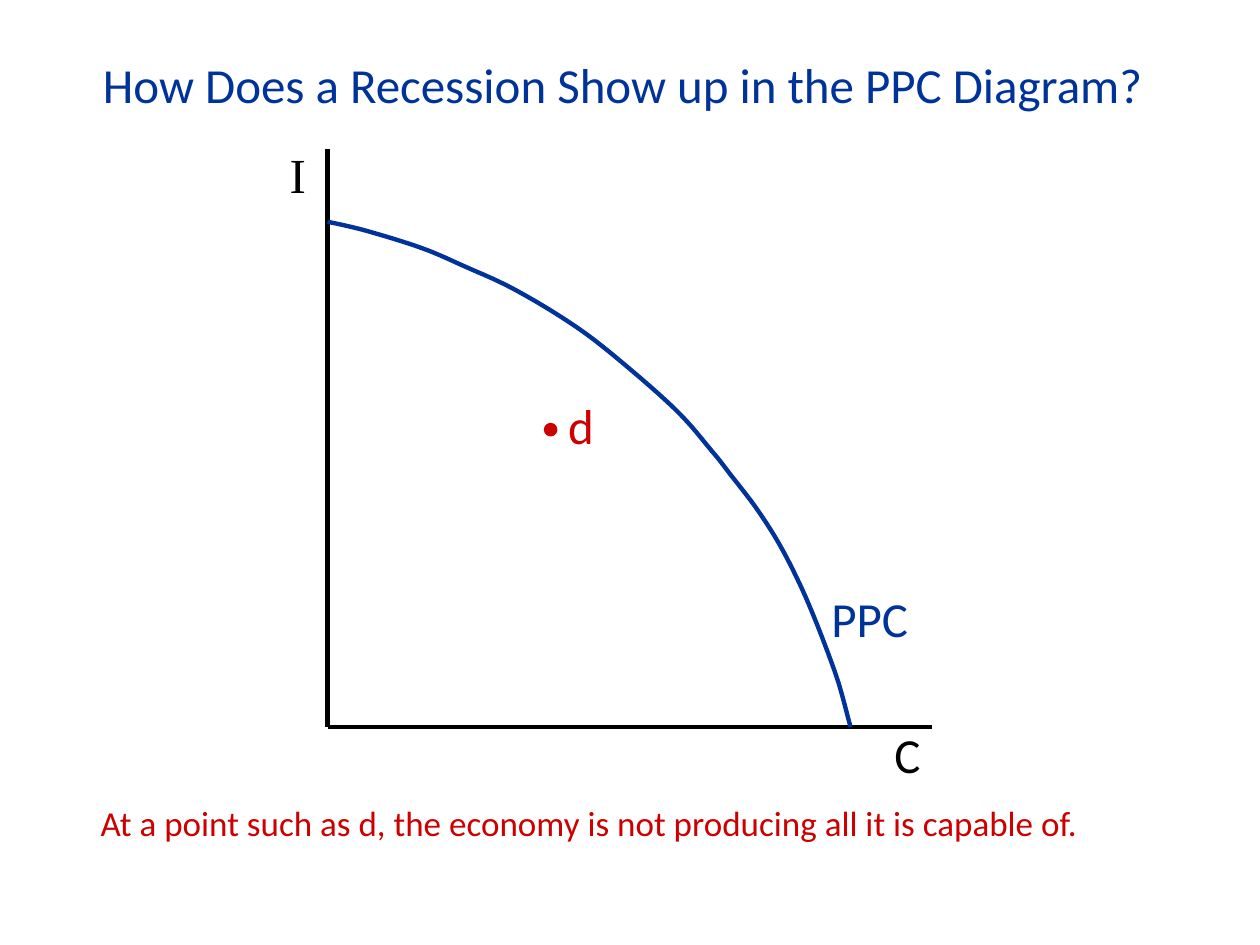
from dataclasses import dataclass

from lxml import etree
from pptx import Presentation
from pptx.dml.color import RGBColor
from pptx.enum.shapes import MSO_CONNECTOR as Connector, MSO_SHAPE as Shape
from pptx.enum.text import MSO_ANCHOR as Anchor, MSO_AUTO_SIZE as AutoSize, PP_ALIGN as Align
from pptx.oxml.ns import qn
from pptx.util import Inches, Pt


@dataclass(frozen=True)
class Theme:
    blue: RGBColor = RGBColor(0x00, 0x33, 0x99)
    red: RGBColor = RGBColor(0xCC, 0x00, 0x00)
    black: RGBColor = RGBColor(0x00, 0x00, 0x00)
    font: str = "Calibri"
    serif: str = "Times New Roman"
    large: Pt = Pt(28)
    small: Pt = Pt(20)
    stroke: Pt = Pt(2.5)
    outline: Pt = Pt(2)


class DiagramSlide:
    def __init__(self, slide, theme):
        self.slide = slide
        self.theme = theme

    def text(self, text, left, top, width, height, color, size=None, font=None,
             align=Align.LEFT, anchor=Anchor.TOP):
        box = self.slide.shapes.add_textbox(
            Inches(left), Inches(top), Inches(width), Inches(height))
        text_frame = box.text_frame
        text_frame.word_wrap = True
        text_frame.auto_size = AutoSize.SHAPE_TO_FIT_TEXT
        text_frame.vertical_anchor = anchor
        text_frame.text = text
        paragraph = text_frame.paragraphs[0]
        paragraph.alignment = align
        run_font = paragraph.runs[0].font
        run_font.name = font or self.theme.font
        run_font.size = size or self.theme.large
        run_font.color.rgb = color

    def line(self, start, end, color):
        connector = self.slide.shapes.add_connector(
            Connector.STRAIGHT, *(Inches(value) for value in (*start, *end)))
        connector.line.color.rgb = color
        connector.line.width = self.theme.stroke
        properties = connector._element.spPr
        etree.SubElement(properties, qn("a:effectLst"))

    def curve(self, knots, color, steps=8):
        points = [(Inches(x), Inches(y)) for x, y in smooth_points(knots, steps)]
        builder = self.slide.shapes.build_freeform(*points[0], scale=1.0)
        builder.add_line_segments(points[1:], close=False)
        shape = builder.convert_to_shape()
        shape.shadow.inherit = False
        shape.fill.background()
        shape.line.color.rgb = color
        shape.line.width = self.theme.stroke

    def dot(self, left, top, diameter, color):
        shape = self.slide.shapes.add_shape(
            Shape.OVAL, Inches(left), Inches(top), Inches(diameter), Inches(diameter))
        shape.shadow.inherit = False
        shape.fill.solid()
        shape.fill.fore_color.rgb = color
        shape.line.color.rgb = color
        shape.line.width = self.theme.outline


def smooth_points(knots, steps):
    """Return a Catmull-Rom curve through the knots as closely spaced points."""
    padded = [knots[0], *knots, knots[-1]]
    points = [knots[0]]
    for a, b, c, d in zip(padded, padded[1:], padded[2:], padded[3:]):
        for step in range(1, steps + 1):
            t = step / steps
            points.append(tuple(
                (2 * q + (r - p) * t + (2 * p - 5 * q + 4 * r - s) * t ** 2
                 + (3 * q - p - 3 * r + s) * t ** 3) / 2
                for p, q, r, s in zip(a, b, c, d)))
    return points


def main():
    presentation = Presentation()
    presentation.slide_width = Inches(10)
    presentation.slide_height = Inches(7.5)
    theme = Theme()
    diagram = DiagramSlide(
        presentation.slides.add_slide(presentation.slide_layouts[6]), theme)

    # Title
    diagram.text("How Does a Recession Show up in the PPC Diagram?",
                 0.64, 0.35, 8.6, 0.64, theme.blue,
                 align=Align.CENTER, anchor=Anchor.MIDDLE)

    # Axes and their labels
    diagram.text("C", 7, 5.7, 0.5, 0.57, theme.black)
    diagram.text("I", 2.2, 1.1, 0.42, 0.57, theme.black, font=theme.serif)
    origin = (2.6, 5.77)
    diagram.line((2.6, 1.18), origin, theme.black)
    diagram.line(origin, (7.4, 5.77), theme.black)

    # Production possibilities curve
    frontier = [
        (2.6, 1.76), (2.9, 1.83), (3.35, 1.97), (3.7, 2.12), (4.05, 2.28),
        (4.46, 2.52), (4.82, 2.78), (5.35, 3.24), (5.65, 3.58), (5.8, 3.77),
        (6, 4.03), (6.18, 4.31), (6.34, 4.62), (6.47, 4.92), (6.6, 5.26),
        (6.67, 5.47), (6.75, 5.77),
    ]
    diagram.curve(frontier, theme.blue)
    diagram.text("PPC", 6.5, 4.62, 1, 0.57, theme.blue)

    # Recession point inside the curve
    diagram.dot(4.33, 3.37, 0.08, theme.red)
    diagram.text("d", 4.41, 3.09, 0.42, 0.57, theme.red)

    # Conclusion
    diagram.text("At a point such as d, the economy is not producing all it is capable of.",
                 0.7, 6.31, 8.6, 0.44, theme.red, size=theme.small)

    presentation.save("out.pptx")


if __name__ == "__main__":
    main()
